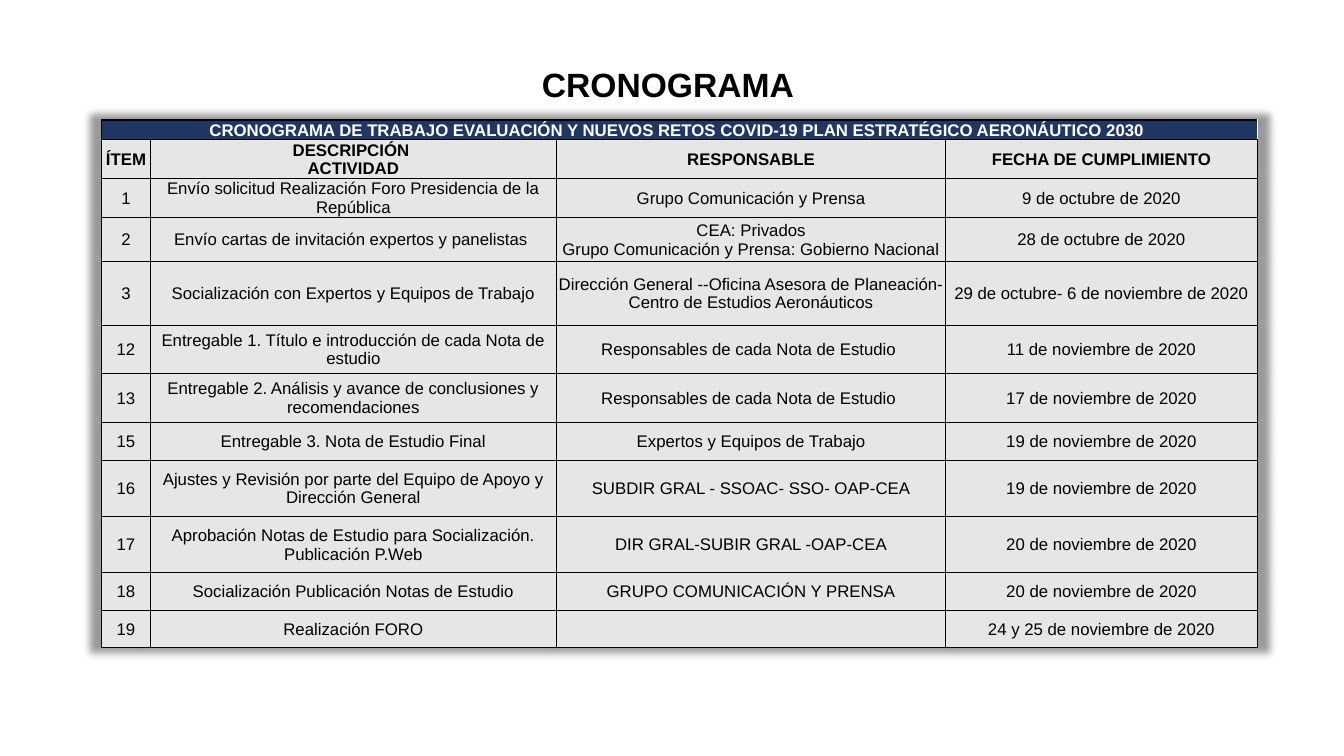
from lxml import etree
from pptx import Presentation
from pptx.dml.color import RGBColor
from pptx.enum.text import MSO_ANCHOR as Anchor, PP_ALIGN as Align
from pptx.oxml.ns import qn
from pptx.util import Inches, Pt

# Content
HEADING = "CRONOGRAMA "
TABLE_TITLE = ("CRONOGRAMA DE TRABAJO EVALUACIÓN Y NUEVOS RETOS COVID-19 "
               "PLAN ESTRATÉGICO AERONÁUTICO 2030 ")
COLUMN_NAMES = ("ÍTEM", "DESCRIPCIÓN \nACTIVIDAD", "RESPONSABLE", "FECHA DE CUMPLIMIENTO")
ACTIVITIES = [
    ("1", "Envío solicitud Realización Foro Presidencia de la República",
     "Grupo Comunicación y Prensa", "9 de octubre de 2020"),
    ("2", "Envío cartas de invitación expertos y panelistas ",
     "CEA: Privados\nGrupo Comunicación y Prensa: Gobierno Nacional", "28 de octubre de 2020"),
    ("3", "Socialización con Expertos y Equipos de Trabajo",
     "Dirección General --Oficina Asesora de Planeación-Centro de Estudios Aeronáuticos",
     "29 de octubre- 6 de noviembre de 2020"),
    ("12", "Entregable 1. Título e introducción de cada Nota de estudio",
     "Responsables de cada Nota de Estudio ", "11 de noviembre de 2020"),
    ("13", "Entregable 2. Análisis y avance de conclusiones y recomendaciones",
     "Responsables de cada Nota de Estudio ", "17 de noviembre de 2020"),
    ("15", "Entregable 3. Nota de Estudio Final",
     "Expertos y Equipos de Trabajo", "19 de noviembre de 2020"),
    ("16", "Ajustes y Revisión por parte del Equipo de Apoyo y Dirección General",
     "SUBDIR GRAL - SSOAC- SSO- OAP-CEA", "19 de noviembre de 2020"),
    ("17", "Aprobación Notas de Estudio para Socialización.\nPublicación P.Web",
     "DIR GRAL-SUBIR GRAL -OAP-CEA", "20 de noviembre de 2020"),
    ("18", "Socialización Publicación Notas de Estudio",
     "GRUPO COMUNICACIÓN Y PRENSA", "20 de noviembre de 2020"),
    ("19", "Realización FORO", "", "24 y 25 de noviembre de 2020"),
]

# Layout and colours
COLUMN_WIDTHS = (0.48, 4.03, 3.86, 3.09)
ROW_HEIGHTS = (0.18, 0.37, 0.37, 0.44, 0.63, 0.48, 0.49, 0.37, 0.56, 0.56, 0.37, 0.37)
FONT = "Arial"
BLACK = RGBColor(0x00, 0x00, 0x00)
WHITE = RGBColor(0xFF, 0xFF, 0xFF)
NAVY = RGBColor(0x20, 0x37, 0x64)
GRAY = RGBColor(0xE7, 0xE6, 0xE6)


def write_text(paragraph, text, size, color, bold):
    paragraph.alignment = Align.CENTER
    paragraph.font.size = Pt(size)
    for number, line in enumerate(text.split("\n")):
        if number:
            paragraph.add_line_break()
        if line:
            run = paragraph.add_run()
            run.text = line
            run.font.name = FONT
            run.font.size = Pt(size)
            run.font.bold = bold
            run.font.color.rgb = color


def add_color(parent, color):
    solid = etree.SubElement(parent, qn("a:solidFill"))
    return etree.SubElement(solid, qn("a:srgbClr"), val=str(color))


def set_borders(cell, **widths):
    properties = cell._tc.get_or_add_tcPr()
    for side, width in widths.items():
        line = etree.SubElement(properties, qn(f"a:ln{side}"), w=str(Pt(width)))
        add_color(line, BLACK)


def fill_cell(cell, text, color, fill, bold):
    cell.fill.solid()
    cell.fill.fore_color.rgb = fill
    cell.vertical_anchor = Anchor.MIDDLE
    cell.margin_left = cell.margin_right = cell.margin_top = Inches(0.01)
    cell.margin_bottom = 0
    write_text(cell.text_frame.paragraphs[0], text, 12, color, bold)


def add_glow_shadow(table):
    effects = etree.Element(qn("a:effectLst"))
    shadow = etree.SubElement(effects, qn("a:outerShdw"), blurRad=str(Pt(5)),
                              sx="102000", sy="102000", algn="ctr", rotWithShape="0")
    shade = etree.SubElement(shadow, qn("a:srgbClr"), val=str(BLACK))
    etree.SubElement(shade, qn("a:alpha"), val="40000")
    table._tbl.tblPr.insert(0, effects)


def add_schedule(slide):
    frame = slide.shapes.add_table(
        len(ROW_HEIGHTS), len(COLUMN_WIDTHS), Inches(1.01), Inches(1.19),
        Inches(sum(COLUMN_WIDTHS)), Inches(sum(ROW_HEIGHTS)))
    table = frame.table
    table.first_row = table.horz_banding = False
    for column, width in zip(table.columns, COLUMN_WIDTHS):
        column.width = Inches(width)
    for row, height in zip(table.rows, ROW_HEIGHTS):
        row.height = Inches(height)

    # Title row across all columns
    title = table.cell(0, 0)
    title.merge(table.cell(0, len(COLUMN_WIDTHS) - 1))
    set_borders(title, L=1, T=1, B=1)
    fill_cell(title, TABLE_TITLE, WHITE, NAVY, True)

    # Column names and activities
    for row, texts in enumerate([COLUMN_NAMES, *ACTIVITIES], start=1):
        is_header = row == 1
        for column, text in enumerate(texts):
            cell = table.cell(row, column)
            set_borders(cell, L=0.5 if column else 1, R=0.5,
                        T=1 if is_header else 0.5, B=0.5)
            fill_cell(cell, text, BLACK, GRAY, is_header)
    add_glow_shadow(table)


def add_heading(slide):
    box = slide.shapes.add_textbox(Inches(4), Inches(0.64), Inches(5.33), Inches(0.43))
    text_frame = box.text_frame
    text_frame.word_wrap = True
    text_frame.vertical_anchor = Anchor.MIDDLE
    text_frame.margin_left = text_frame.margin_right = Inches(0.1)
    text_frame.margin_top = text_frame.margin_bottom = Inches(0.1)
    paragraph = text_frame.paragraphs[0]
    paragraph.line_spacing = 0.9
    write_text(paragraph, HEADING, 24, BLACK, True)


def main():
    presentation = Presentation()
    presentation.slide_width = Inches(13.33)
    presentation.slide_height = Inches(7.5)
    slide = presentation.slides.add_slide(presentation.slide_layouts[6])
    add_schedule(slide)
    add_heading(slide)
    presentation.save("out.pptx")


if __name__ == "__main__":
    main()
